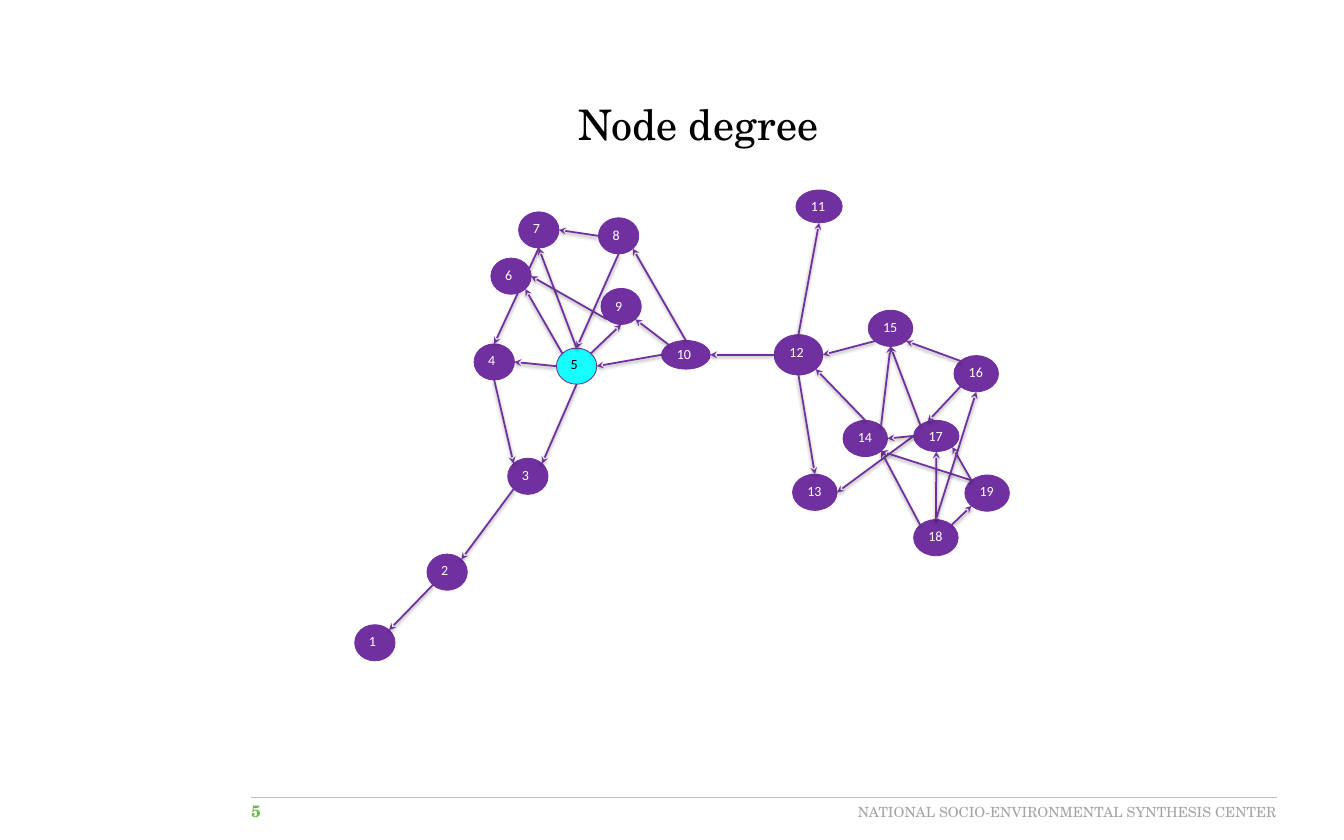
import math

import lxml.etree
import pptx
import pptx.dml.color
import pptx.enum.shapes
import pptx.enum.text
import pptx.oxml.ns
import pptx.util

CELL = 0.1
COLUMNS, ROWS = 159.9, 99.9
PURPLE, CYAN, WHITE, BLACK = "7030A0", "15FFFF", "FFFFFF", "000000"
SERIF, SANS = "TeX Gyre Schola", "Calibri"
ALIGN = pptx.enum.text.PP_ALIGN
ANCHOR = pptx.enum.text.MSO_ANCHOR

ROUND, WIDE = (4.8, 4.3), (5.3, 4.3)
NODES = {
    "1": (42.2, 74.3, *ROUND),
    "2": (50.8, 65.9, *ROUND),
    "3": (60.4, 54.5, *ROUND),
    "4": (56.4, 40.9, *ROUND),
    "5": (66.2, 41.4, *ROUND),
    "6": (58.4, 30.7, *ROUND),
    "7": (61.7, 25.2, *ROUND),
    "8": (71.2, 25.9, *ROUND),
    "9": (71.5, 34.3, *ROUND),
    "10": (78.7, 40.5, 5.8, 3.4),
    "11": (94.7, 22.6, 5.5, 3.9),
    "12": (92.1, 39.8, 5.8, 4.8),
    "13": (94.3, 56.4, *WIDE),
    "14": (100.3, 50, *WIDE),
    "15": (103.3, 36.9, *WIDE),
    "16": (113.5, 42.3, *WIDE),
    "17": (108.7, 50, 5.4, 3.7),
    "18": (108.7, 61.8, *WIDE),
    "19": (114.8, 56.5, *WIDE),
}
FOCUS_NODE, FRONT_NODE = "5", "6"
MIDDLE_ANCHORED = ("8", "9", "10")

EDGES = (
    "16 nw 15 se", "7 s 4 n", "10 w 5 e", "12 s 13 n", "10 n 8 se",
    "8 s 5 n", "4 s 3 nw", "5 w 4 e", "12 w 10 e", "15 sw 12 e",
    "12 n 11 s", "5 nw 6 se", "3 sw 2 ne", "10 nw 9 se", "2 sw 1 ne",
    "5 s 3 ne", "5 n 7 s", "9 sw 6 e", "5 ne 9 s", "17 w 13 e",
    "8 w 7 e", "17 nw 15 s", "14 n 12 se", "14 ne 15 s", "17 w 14 e",
    "18 n 17 s", "18 nw 14 se", "19 nw 14 se", "16 sw 17 nnw",
    "19 nw 17 se", "18 n 16 s", "18 ne 19 sw",
)
BEARINGS = {"e": 0, "ne": 45, "n": 90, "nnw": 112.5, "nw": 135,
            "w": 180, "sw": 225, "s": 270, "se": 315}


def color(hex_code):
    return pptx.dml.color.RGBColor.from_string(hex_code)


def cells(*counts):
    return [pptx.util.Inches(count * CELL) for count in counts]


def apply(target, settings):
    for attribute, value in settings.items():
        setattr(target, attribute, value)


def write(frame, words, font, tint, paragraph_format=None, frame_format=None):
    apply(frame, {"word_wrap": True, **(frame_format or {})})
    paragraph = frame.paragraphs[0]
    apply(paragraph, {"alignment": ALIGN.LEFT, **(paragraph_format or {})})
    run = paragraph.add_run()
    run.text = words
    apply(run.font, font)
    run.font.color.rgb = color(tint)


def add_label(slide, words, area, font, tint, paragraph_format=None, frame_format=None):
    label = slide.shapes.add_textbox(*cells(*area))
    write(label.text_frame, words, font, tint, paragraph_format, frame_format)


def add_node(slide, number):
    focused = number == FOCUS_NODE
    node = slide.shapes.add_shape(
        pptx.enum.shapes.MSO_SHAPE.OVAL, *cells(*NODES[number]))
    node.shadow.inherit = False
    node.fill.solid()
    node.fill.fore_color.rgb = color(CYAN if focused else PURPLE)
    node.line.color.rgb = color(PURPLE)
    node.line.width = pptx.util.Pt(0.75)
    anchor = ANCHOR.MIDDLE if number in MIDDLE_ANCHORED else ANCHOR.TOP
    write(node.text_frame, number, {"name": SANS, "size": pptx.util.Pt(12)},
          BLACK if focused else WHITE, {"line_spacing": 0.93},
          {"vertical_anchor": anchor})
    return node


def rim_point(number, bearing):
    left, top, width, height = NODES[number]
    angle = math.radians(BEARINGS[bearing])
    return (left + width / 2 * (1 + math.cos(angle)),
            top + height / 2 * (1 - math.sin(angle)))


def add_line(slide, start, end, tint, weight):
    line = slide.shapes.add_connector(
        pptx.enum.shapes.MSO_CONNECTOR.STRAIGHT, *cells(*start, *end))
    line.line.color.rgb = color(tint)
    line.line.width = pptx.util.Pt(weight)
    effects = lxml.etree.SubElement(
        line._element.spPr, pptx.oxml.ns.qn("a:effectLst"))
    return line, effects


def add_edge(slide, edge, drawn):
    source, leaving, target, arriving = edge.split()
    arrow, effects = add_line(slide, rim_point(source, leaving),
                              rim_point(target, arriving), PURPLE, 1.5)
    qn = pptx.oxml.ns.qn
    lxml.etree.SubElement(
        arrow.line._get_or_add_ln(), qn("a:tailEnd"), type="stealth")
    shadow = lxml.etree.SubElement(
        effects, qn("a:outerShdw"), blurRad="40000", dist="20000",
        dir="5400000", rotWithShape="0")
    shade = lxml.etree.SubElement(shadow, qn("a:srgbClr"), val=BLACK)
    lxml.etree.SubElement(shade, qn("a:alpha"), val="38000")
    if leaving == "n":
        arrow.begin_connect(drawn[source], 0)
    if arriving == "n":
        arrow.end_connect(drawn[target], 0)


def add_footer(slide):
    flush = {"margin_left": 0, "margin_right": 0}
    add_label(slide, "5", (29.9, 94.8, 5.8, 2.9),
              {"name": SERIF, "size": pptx.util.Pt(14), "bold": True},
              "6BBB42", frame_format={**flush, "margin_bottom": 0})
    add_label(slide, "NATIONAL SOCIO-ENVIRONMENTAL SYNTHESIS CENTER",
              (101.4, 95.1, 50.5, 3), {"name": SERIF, "size": pptx.util.Pt(12)},
              "A5A5A5", {"alignment": ALIGN.RIGHT}, flush)
    add_line(slide, (29.9, 94.8), (151.9, 94.8), "BFBFBF", 0.75)


def main():
    deck = pptx.Presentation()
    deck.slide_width, deck.slide_height = cells(COLUMNS, ROWS)
    slide = deck.slides.add_slide(deck.slide_layouts[6])
    add_footer(slide)
    drawn = {number: add_node(slide, number)
             for number in NODES if number != FRONT_NODE}
    for edge in EDGES:
        add_edge(slide, edge, drawn)
    add_node(slide, FRONT_NODE)
    add_label(slide, "Node degree", (67.8, 11.2, 37.7, 7.1),
              {"name": SERIF, "size": pptx.util.Pt(36)}, BLACK)
    deck.save("out.pptx")


if __name__ == "__main__":
    main()
